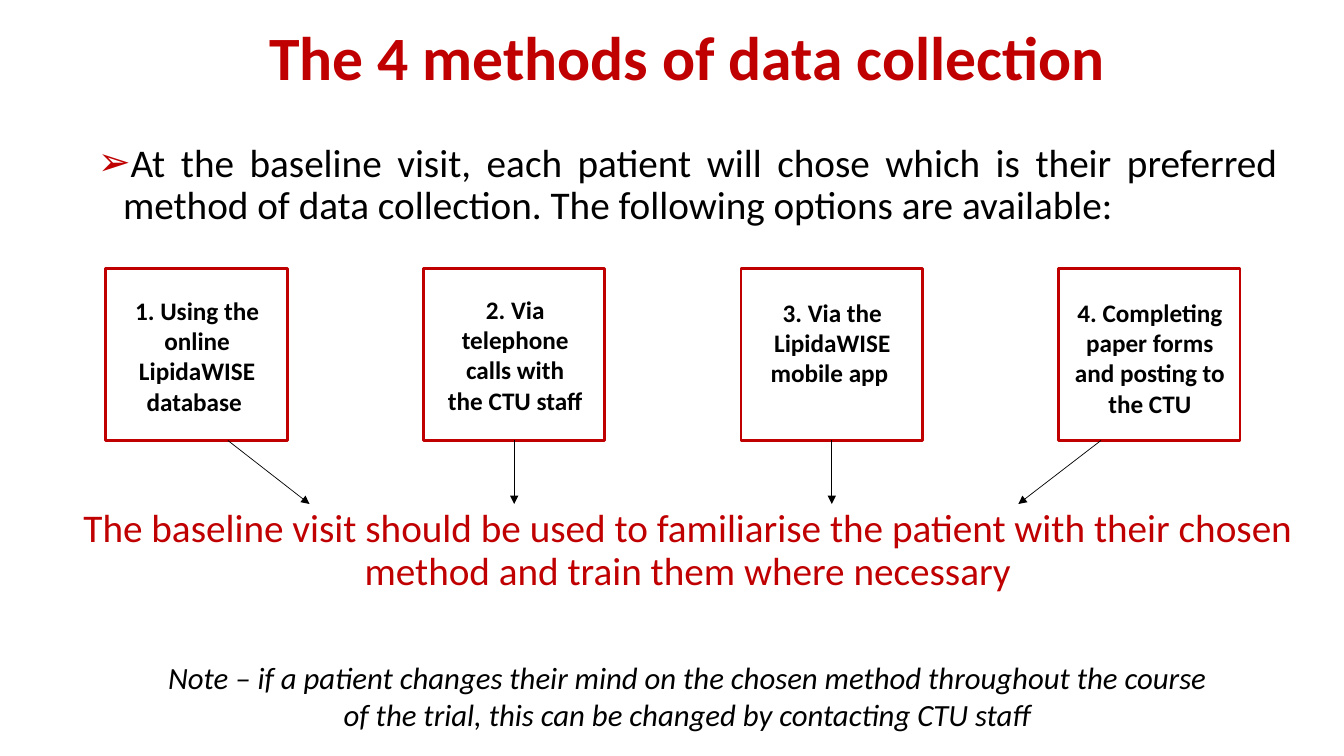
import pptx
import pptx.dml.color
import pptx.enum.dml
import pptx.enum.shapes
import pptx.enum.text
import pptx.oxml
import pptx.oxml.ns
import pptx.util

PX = 9144
RED = pptx.dml.color.RGBColor(0xC0, 0x00, 0x00)
BLACK = pptx.dml.color.RGBColor(0x00, 0x00, 0x00)
WHITE = pptx.dml.color.RGBColor(0xFF, 0xFF, 0xFF)
ALIGN = pptx.enum.text.PP_ALIGN
ANCHOR = pptx.enum.text.MSO_ANCHOR
AUTOSIZE = pptx.enum.text.MSO_AUTO_SIZE
DRAWING = 'xmlns:a="http://schemas.openxmlformats.org/drawingml/2006/main"'

BOX_LEFT, BOX_TOP, BOX_WIDTH, BOX_HEIGHT, BOX_PITCH = 105, 266, 180, 171, 315

# Each method: wording, caption area inside its box, arrow start and end from the box's left.
METHODS = [
    ("1. Using the online LipidaWISE database ", (0, 22, 181, 136), (121, 202)),
    ("2. Via telephone calls with the CTU staff ", (14, 21, 154, 131), None),
    ("3. Via the LipidaWISE mobile app ", (14, 24, 153, 101), None),
    ("4. Completing paper forms and posting to the CTU", (2, 24, 177, 131), (42, -40)),
]


def scale(*lengths):
    """Turn px lengths into EMU."""
    return [pptx.util.Emu(length * PX) for length in lengths]


def set_values(target, values):
    """Set each named attribute of the target."""
    for name, value in values.items():
        setattr(target, name, value)


def move(shape, area):
    """Give a shape its left, top, width and height."""
    set_values(shape, dict(zip(("left", "top", "width", "height"), scale(*area))))


def write(shape, text, size, color, para_format=None, font_format=None,
          anchor=ANCHOR.TOP, auto_size=AUTOSIZE.NONE):
    """Fill a shape with one formatted paragraph and return it."""
    frame = shape.text_frame
    set_values(frame, {"word_wrap": True, "auto_size": auto_size,
                       "vertical_anchor": anchor})
    para = frame.paragraphs[0]
    set_values(para, {"alignment": ALIGN.CENTER, **(para_format or {})})
    span = para.add_run()
    span.text = text
    set_values(span.font, {"name": "Calibri", "size": pptx.util.Pt(size),
                           **(font_format or {})})
    span.font.color.rgb = color
    return para


def add_title(page, area):
    """Place the slide title."""
    title = page.shapes.title
    move(title, area)
    write(title, "The 4 methods of data collection", 44, RED,
          {"line_spacing": 0.9}, {"bold": True}, ANCHOR.MIDDLE)


def add_intro(page, area):
    """Place the justified introduction with its arrow bullet."""
    body = page.placeholders[1]
    move(body, area)
    para = write(
        body,
        "At the baseline visit, each patient will chose which is their preferred "
        "method of data collection. The following options are available:",
        28, BLACK,
        {"alignment": ALIGN.JUSTIFY, "line_spacing": 0.9,
         "space_before": pptx.util.Pt(10)})
    properties = para._p.get_or_add_pPr()
    indent = 25 * PX
    properties.set("marL", str(indent))
    properties.set("indent", str(-indent))
    for bullet in (f'<a:buClr {DRAWING}><a:srgbClr val="{RED}"/></a:buClr>',
                   f'<a:buChar {DRAWING} char="➢"/>'):
        properties.append(pptx.oxml.parse_xml(bullet))


def add_method(page, area, text, caption_area):
    """Draw one outlined method box with its caption and return the box."""
    left, top, _, _ = area
    inner_left, inner_top, width, height = caption_area
    group = page.shapes.add_group_shape()
    caption = group.shapes.add_textbox(
        *scale(left + inner_left, top + inner_top, width, height))
    write(caption, text, 18, BLACK, font_format={"bold": True},
          auto_size=AUTOSIZE.SHAPE_TO_FIT_TEXT)
    box = group.shapes.add_shape(
        pptx.enum.shapes.MSO_SHAPE.RECTANGLE, *scale(*area))
    box.shadow.inherit = False
    box.fill.background()
    box.line.color.rgb = RED
    box.line.width = pptx.util.Pt(2)
    return box


def add_arrow(page, start, end, box=None):
    """Draw a thin arrow, joined to the bottom of a box when one is given."""
    arrow = page.shapes.add_connector(
        pptx.enum.shapes.MSO_CONNECTOR.STRAIGHT, *scale(*start, *end))
    if box is not None:
        arrow.begin_connect(box, 2)
    arrow.line.color.rgb = BLACK
    arrow.line.width = pptx.util.Pt(0.5)
    arrow.line._get_or_add_ln().append(
        pptx.oxml.parse_xml(f'<a:tailEnd {DRAWING} type="triangle"/>'))
    arrow._element.spPr.append(pptx.oxml.parse_xml(f"<a:effectLst {DRAWING}/>"))


def add_methods(page, arrow_end):
    """Lay out the row of methods and the arrows below it."""
    bottom = BOX_TOP + BOX_HEIGHT
    for index, (text, caption_area, slant) in enumerate(METHODS):
        left = BOX_LEFT + index * BOX_PITCH
        box = add_method(page, (left, BOX_TOP, BOX_WIDTH, BOX_HEIGHT),
                         text, caption_area)
        middle = BOX_WIDTH // 2
        start, end = slant or (middle, middle)
        add_arrow(page, (left + start, bottom), (left + end, arrow_end),
                  None if slant else box)


def add_note(page, area):
    """Place the italic note at the foot of the slide."""
    note = page.shapes.add_textbox(*scale(*area))
    write(note,
          "Note – if a patient changes their mind on the chosen method throughout "
          "the course of the trial, this can be changed by contacting CTU staff",
          22, BLACK, font_format={"italic": True},
          auto_size=AUTOSIZE.SHAPE_TO_FIT_TEXT)


def add_conclusion(page, area):
    """Place the red statement the arrows lead to."""
    conclusion = page.shapes.add_textbox(*scale(*area))
    write(conclusion,
          "The baseline visit should be used to familiarise the patient with their "
          "chosen method and train them where necessary",
          28, RED,
          {"line_spacing": 0.9, "space_before": pptx.util.Pt(10),
           "space_after": pptx.util.Pt(8)})


def main():
    """Build and save the slide."""
    deck = pptx.Presentation()
    set_values(deck, dict(zip(("slide_width", "slide_height"), scale(1333, 750))))
    page = deck.slides.add_slide(deck.slide_layouts[1])
    page.background.fill.solid()
    page.background.fill.fore_color.rgb = WHITE
    add_title(page, (240, 0, 884, 120))
    add_intro(page, (87, 137, 1190, 110))
    add_methods(page, 500)
    add_note(page, (147, 649, 1069, 84))
    add_conclusion(page, (31, 500, 1302, 109))
    deck.save("out.pptx")


if __name__ == "__main__":
    main()
